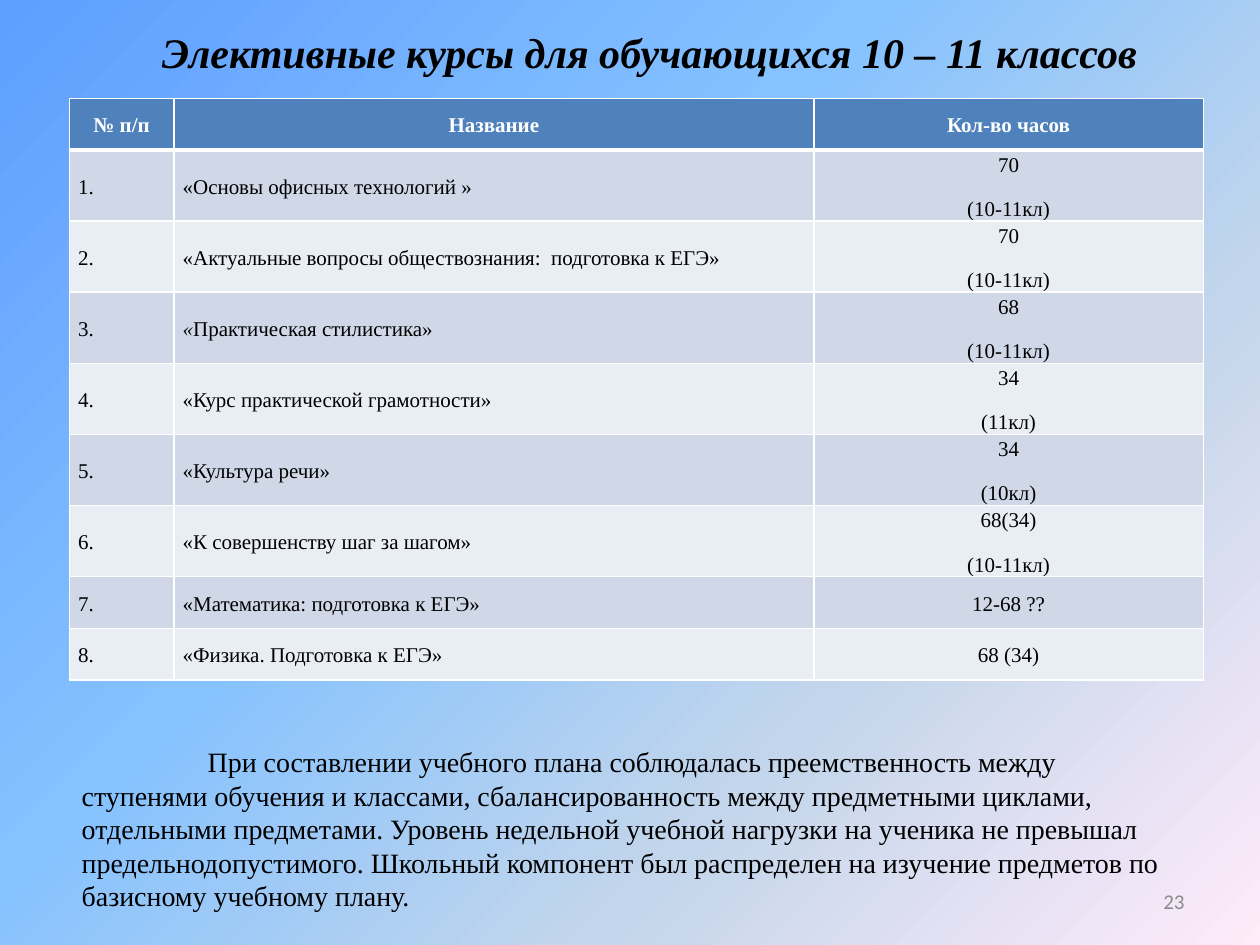
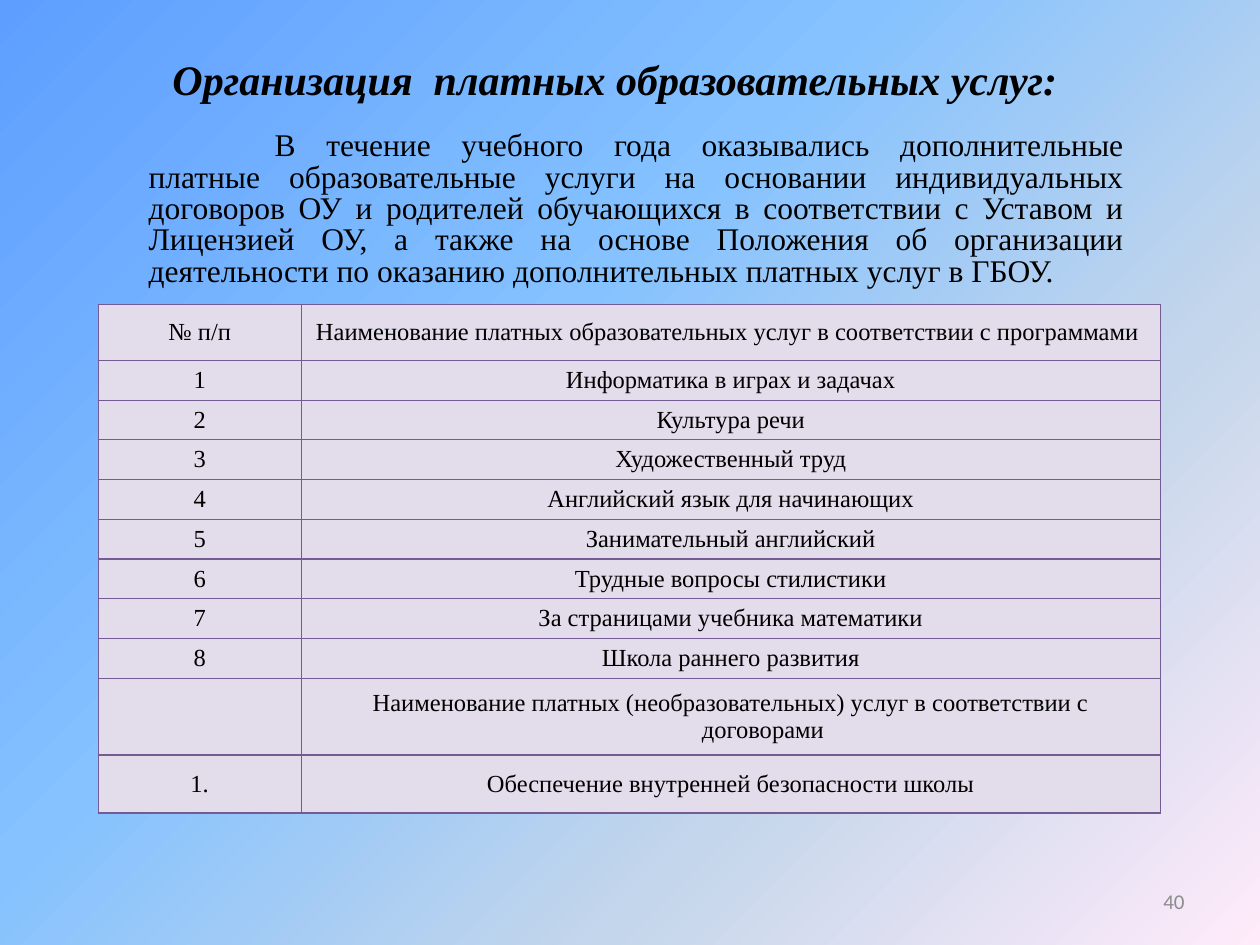
from dataclasses import dataclass

from lxml import etree
from pptx import Presentation
from pptx.dml.color import RGBColor
from pptx.enum.text import MSO_ANCHOR, MSO_AUTO_SIZE, PP_ALIGN
from pptx.oxml.ns import qn
from pptx.util import Inches, Pt

LEFT, CENTER, RIGHT, JUSTIFY = PP_ALIGN.LEFT, PP_ALIGN.CENTER, PP_ALIGN.RIGHT, PP_ALIGN.JUSTIFY
TOP, MIDDLE, BOTTOM = MSO_ANCHOR.TOP, MSO_ANCHOR.MIDDLE, MSO_ANCHOR.BOTTOM
FIXED, GROW = MSO_AUTO_SIZE.NONE, MSO_AUTO_SIZE.SHAPE_TO_FIT_TEXT
TITLE_AND_BODY, TITLE_ONLY = 1, 5


@dataclass(frozen=True)
class Theme:
    font: str = "Times New Roman"
    number_font: str = "Calibri"
    text: str = "000000"
    inverse: str = "FFFFFF"
    number: str = "8C8C8C"
    gradient: tuple = ((0, "5E9EFF"), (40, "85C2FF"), (70, "C4D6EB"), (100, "FFEBFA"))
    title_size: int = 24
    body_size: int = 18
    note_size: int = 16
    service_size: int = 14
    small_size: int = 12


@dataclass(frozen=True)
class TableStyle:
    header_fill: str
    row_fills: tuple
    header_color: str
    header_bold: bool
    border: str
    border_width: float
    header_rule: float
    size: int
    margins: tuple
    line_spacing: float = 1.0
    space_after: int = 0
    hanging: float = 0


THEME = Theme()
COURSE_STYLE = TableStyle("4F81BD", ("D0D8E8", "E9EDF4"), THEME.inverse, True, "FFFFFF", 1, 3,
                          THEME.small_size, (0.07, 0), line_spacing=1.15, space_after=10)
SERVICE_STYLE = TableStyle("E2DCEB", ("E2DCEB",), THEME.text, False, "745B93", 0.75, 0.75,
                           THEME.service_size, (0.1, 0.05), hanging=0.51)

COURSES = [
    ("№ п/п", "Название", "Кол-во часов"),
    ("1.", "«Основы офисных технологий »", "70\n(10-11кл)"),
    ("2.", "«Актуальные вопросы обществознания:  подготовка к ЕГЭ»", "70\n(10-11кл)"),
    ("3.", "«", "68\n(10-11кл)"),
    ("4.", "«Курс практической грамотности»", "34\n(11кл)"),
    ("5.", "«Культура речи»", "34\n(10кл)"),
    ("6.", "«К совершенству шаг за шагом»", "68(34)\n(10-11кл)"),
    ("7.", "«Математика: подготовка к ЕГЭ»", "12-68 ??"),
    ("8.", "«Физика. Подготовка к ЕГЭ»", "68 (34)"),
]
STYLISTICS_ROW = 3

SERVICES = [
    ("№ п/п", "Наименование платных образовательных услуг в соответствии с программами "),
    ("1", "Информатика в играх и задачах"),
    ("2", "Культура речи"),
    ("3", "Художественный труд"),
    ("4", "Английский язык для начинающих"),
    ("5", "Занимательный английский"),
    ("6", "Трудные вопросы стилистики"),
    ("7", "За страницами учебника математики"),
    ("8", "Школа раннего развития"),
    ("", "Наименование платных (необразовательных) услуг в соответствии с договорами"),
    ("1.", "Обеспечение внутренней безопасности школы"),
]

CURRICULUM_NOTE = (
    "При составлении учебного плана соблюдалась преемственность между ступенями обучения "
    "и классами, сбалансированность между предметными циклами, отдельными предметами. "
    "Уровень недельной учебной нагрузки на ученика не превышал предельнодопустимого. "
    "Школьный компонент был распределен на изучение предметов по базисному учебному плану."
)
SERVICES_INTRO = (
    "В течение учебного года оказывались дополнительные платные образовательные услуги "
    "на основании индивидуальных договоров ОУ и родителей обучающихся в соответствии с "
    "Уставом и Лицензией ОУ, а также на основе Положения об организации деятельности по "
    "оказанию дополнительных платных услуг в ГБОУ."
)


def indent(paragraph, left, first):
    """Set the left margin and the first-line offset, in inches."""
    properties = paragraph._p.get_or_add_pPr()
    properties.set("marL", str(Inches(left)))
    properties.set("indent", str(Inches(first)))


def add_solid(parent, color):
    fill = etree.SubElement(parent, qn("a:solidFill"))
    etree.SubElement(fill, qn("a:srgbClr"), val=color)


def add_borders(cell, color, widths):
    """Draw the sides of a cell; widths are in points for left, right, top, bottom."""
    properties = cell._tc.get_or_add_tcPr()
    for side, width in zip("LRTB", widths):
        line = etree.SubElement(properties, qn(f"a:ln{side}"), w=str(Pt(width)))
        add_solid(line, color)


class Deck:
    def __init__(self, theme):
        self.theme = theme
        self.presentation = Presentation()
        self.presentation.slide_width = Inches(10)
        self.presentation.slide_height = Inches(7.5)
        self.slide = None
        self.paint_background()

    def paint_background(self):
        fill = self.presentation.slide_master.background.fill
        fill.gradient()
        fill.gradient_angle = 315
        stops = fill._fill._gradFill.find(qn("a:gsLst"))
        for stop in list(stops):
            stops.remove(stop)
        for percent, color in self.theme.gradient:
            stop = etree.SubElement(stops, qn("a:gs"), pos=str(percent * 1000))
            etree.SubElement(stop, qn("a:srgbClr"), val=color)

    def add_slide(self, layout):
        self.slide = self.presentation.slides.add_slide(self.presentation.slide_layouts[layout])

    def format(self, span, size, color=None, bold=False, italic=False, font=None):
        span.font.name = font or self.theme.font
        span.font.size = Pt(size)
        span.font.bold = bold
        span.font.italic = italic
        span.font.color.rgb = RGBColor.from_string(color or self.theme.text)

    def fill_box(self, box, place, text, size, align=LEFT, anchor=TOP, auto_size=FIXED, **look):
        """Place a box, write one paragraph in it and return that paragraph."""
        box.left, box.top, box.width, box.height = map(Inches, place)
        frame = box.text_frame
        frame.text = text
        frame.word_wrap = True
        frame.auto_size = auto_size
        frame.vertical_anchor = anchor
        para = frame.paragraphs[0]
        para.alignment = align
        self.format(para.runs[0], size, **look)
        return para

    def title(self, text, place, anchor=MIDDLE):
        self.fill_box(self.slide.shapes.title, place, text, self.theme.title_size,
                      CENTER, anchor, bold=True, italic=True)

    def body(self, text, place):
        para = self.fill_box(self.slide.placeholders[1], place, text, self.theme.body_size,
                             JUSTIFY, BOTTOM)
        para.line_spacing = 0.83
        indent(para, 0.38, 1)
        etree.SubElement(para._p.get_or_add_pPr(), qn("a:buNone"))

    def text_box(self, text, place, size, **look):
        box = self.slide.shapes.add_textbox(*map(Inches, place))
        return self.fill_box(box, place, text, size, **look)

    def page_number(self, number):
        self.text_box(str(number), (7.17, 6.95, 2.33, 0.4), self.theme.small_size, align=RIGHT,
                      anchor=MIDDLE, color=self.theme.number, font=self.theme.number_font)

    def table(self, corner, columns, heights, rows, style):
        size = sum(columns), sum(heights)
        frame = self.slide.shapes.add_table(len(rows), len(columns), *map(Inches, corner + size))
        table = frame.table
        table.horz_banding = False
        for column, width in zip(table.columns, columns):
            column.width = Inches(width)
        for row, height in zip(table.rows, heights):
            row.height = Inches(height)
        for row_index, texts in enumerate(rows):
            for column_index, text in enumerate(texts):
                self.cell(table.cell(row_index, column_index), text, row_index, style)
        return table

    def cell(self, cell, text, row_index, style):
        header = row_index == 0
        fills = style.row_fills
        top = style.header_rule if row_index == 1 else style.border_width
        bottom = style.header_rule if header else style.border_width
        add_borders(cell, style.border, (style.border_width, style.border_width, top, bottom))
        cell.fill.solid()
        cell.fill.fore_color.rgb = RGBColor.from_string(
            style.header_fill if header else fills[(row_index - 1) % len(fills)])
        cell.margin_left = cell.margin_right = Inches(style.margins[0])
        cell.margin_top = cell.margin_bottom = Inches(style.margins[1])
        cell.vertical_anchor = MIDDLE
        cell.text_frame.text = text
        for para in cell.text_frame.paragraphs:
            para.alignment = CENTER
            para.line_spacing = style.line_spacing
            para.space_after = Pt(style.space_after)
            indent(para, style.hanging, -style.hanging)
            for span in para.runs:
                self.format(span, style.size, style.header_color if header else None,
                            bold=header and style.header_bold)


def build_courses(deck):
    deck.add_slide(TITLE_ONLY)
    deck.title("Элективные курсы для обучающихся 10 – 11 классов", (0.7, 0.16, 8.91, 0.5), TOP)
    table = deck.table((0.55, 0.78), (0.83, 5.08, 3.09), [0.41] * len(COURSES), COURSES,
                       COURSE_STYLE)
    for row_index in range(1, len(COURSES)):
        number, name = (table.cell(row_index, column).text_frame.paragraphs[0]
                        for column in (0, 1))
        number.alignment = name.alignment = LEFT
        number.space_after = Pt(0)
        indent(number, 0.38, -0.38)
    stylistics = table.cell(STYLISTICS_ROW, 1).text_frame.paragraphs[0]
    stylistics.runs[0].font.italic = True
    span = stylistics.add_run()
    span.text = "Практическая стилистика»"
    deck.format(span, COURSE_STYLE.size)
    deck.page_number(23)
    note = deck.text_box(CURRICULUM_NOTE, (0.55, 5.86, 8.91, 1.45), deck.theme.note_size,
                         auto_size=GROW)
    indent(note, 0, 1)


def build_services(deck):
    deck.add_slide(TITLE_AND_BODY)
    deck.title("Организация  платных образовательных услуг:", (0.7, 0, 8.36, 1.25))
    deck.body(SERVICES_INTRO, (0.7, 0.39, 8.32, 1.95))
    deck.page_number(40)
    heights = [0.44] + [0.28] * 8 + [0.61, 0.46]
    deck.table((0.78, 2.42), (1.61, 6.82), heights, SERVICES, SERVICE_STYLE)


def main():
    deck = Deck(THEME)
    build_courses(deck)
    build_services(deck)
    deck.presentation.save("out.pptx")


if __name__ == "__main__":
    main()
